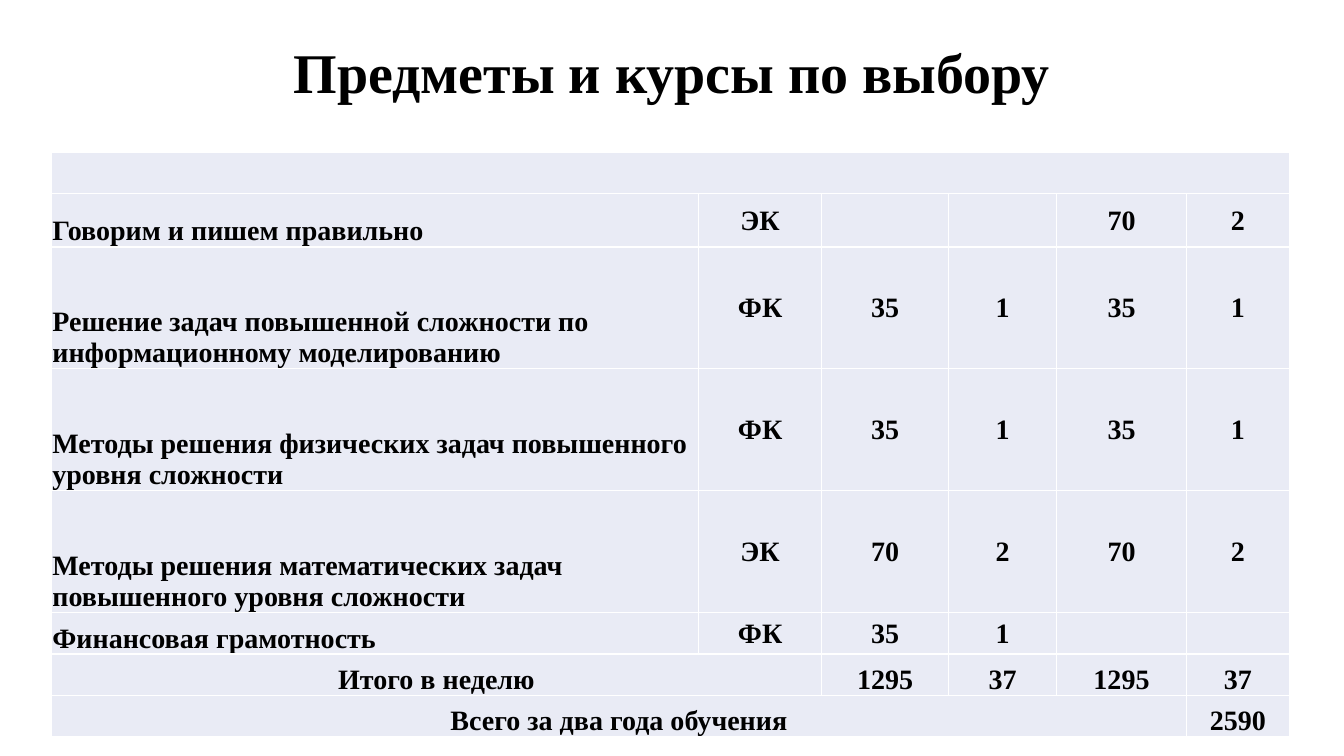
from lxml.etree import SubElement
from pptx import Presentation
from pptx.dml.color import RGBColor
from pptx.enum.text import MSO_ANCHOR as Anchor, PP_ALIGN as Align
from pptx.oxml.ns import qn
from pptx.util import Inches, Pt

WIDTH, HEIGHT = Inches(13.33), Inches(7.5)
FONT = "Times New Roman"
BLACK, WHITE, PALE = "000000", "FFFFFF", "E9EBF5"
COLUMNS = [6.42, 1.22, 1.26, 1.07, 1.29, 1.02]
HEADER, FIRST, TALL, SHORT = 0.41, 0.53, 1.21, 0.41
COURSES = [
    (FIRST, "Говорим и пишем правильно", "ЭК", "", "", "70", "2"),
    (TALL, "Решение задач повышенной сложности по информационному моделированию",
     "ФК", "35", "1", "35", "1"),
    (TALL, "Методы решения физических задач повышенного уровня сложности",
     "ФК", "35", "1", "35", "1"),
    (TALL, "Методы решения математических задач повышенного уровня сложности",
     "ЭК", "70", "2", "70", "2"),
    (SHORT, "Финансовая грамотность", "ФК", "35", "1", "", ""),
]
TOTALS = [
    (SHORT, "Итого в неделю", "", "1295", "37", "1295", "37"),
    (SHORT, "Всего за два года обучения", "", "", "", "", "2590"),
]
ROWS = [(HEADER,) + ("",) * len(COLUMNS)] + COURSES + TOTALS
SPANS = {0: 6, 6: 2, 7: 5}


def color(value):
    return RGBColor.from_string(value)


def style(p, size, align):
    p.alignment = align
    p.font.name = FONT
    p.font.size = Pt(size)
    p.font.bold = True
    p.font.color.rgb = color(BLACK)


def add_title(s, text):
    box = s.shapes.add_textbox(
        int(WIDTH * 0.07), int(HEIGHT * 0.05), int(WIDTH * 0.86), int(HEIGHT * 0.1))
    tf = box.text_frame
    tf.word_wrap = True
    tf.vertical_anchor = Anchor.MIDDLE
    p = tf.paragraphs[0]
    p.text = text
    p.line_spacing = 0.9
    style(p, 40, Align.CENTER)


def add_borders(cell):
    tc_pr = cell._tc.get_or_add_tcPr()
    for side in ("a:lnL", "a:lnR", "a:lnT", "a:lnB"):
        line = SubElement(tc_pr, qn(side), w=str(Pt(1)))
        SubElement(SubElement(line, qn("a:solidFill")), qn("a:srgbClr"), val=WHITE)


def fill_cell(cell, text, align, anchor):
    add_borders(cell)
    cell.fill.solid()
    cell.fill.fore_color.rgb = color(PALE)
    cell.margin_left = cell.margin_right = cell.margin_top = Inches(0.01)
    cell.margin_bottom = 0
    cell.vertical_anchor = anchor
    cell.text = text
    style(cell.text_frame.paragraphs[0], 20, align)


def add_course_table(s):
    table = s.shapes.add_table(
        len(ROWS), len(COLUMNS), Inches(0.51), Inches(1.51),
        Inches(sum(COLUMNS)), Inches(sum(row[0] for row in ROWS))).table
    for column, width in zip(table.columns, COLUMNS):
        column.width = Inches(width)
    first_total = len(ROWS) - len(TOTALS)
    for i, (height, *texts) in enumerate(ROWS):
        table.rows[i].height = Inches(height)
        for j, text in enumerate(texts):
            is_total = i >= first_total
            align = Align.LEFT if j == 0 and not is_total else Align.CENTER
            anchor = Anchor.BOTTOM if j == 0 or is_total else Anchor.MIDDLE
            fill_cell(table.cell(i, j), text, align, anchor)
    for i, span in SPANS.items():
        table.cell(i, 0).merge(table.cell(i, span - 1))


def main():
    prs = Presentation()
    prs.slide_width, prs.slide_height = WIDTH, HEIGHT
    s = prs.slides.add_slide(prs.slide_layouts[6])
    add_title(s, "Предметы и курсы по выбору")
    add_course_table(s)
    prs.save("out.pptx")


if __name__ == "__main__":
    main()
